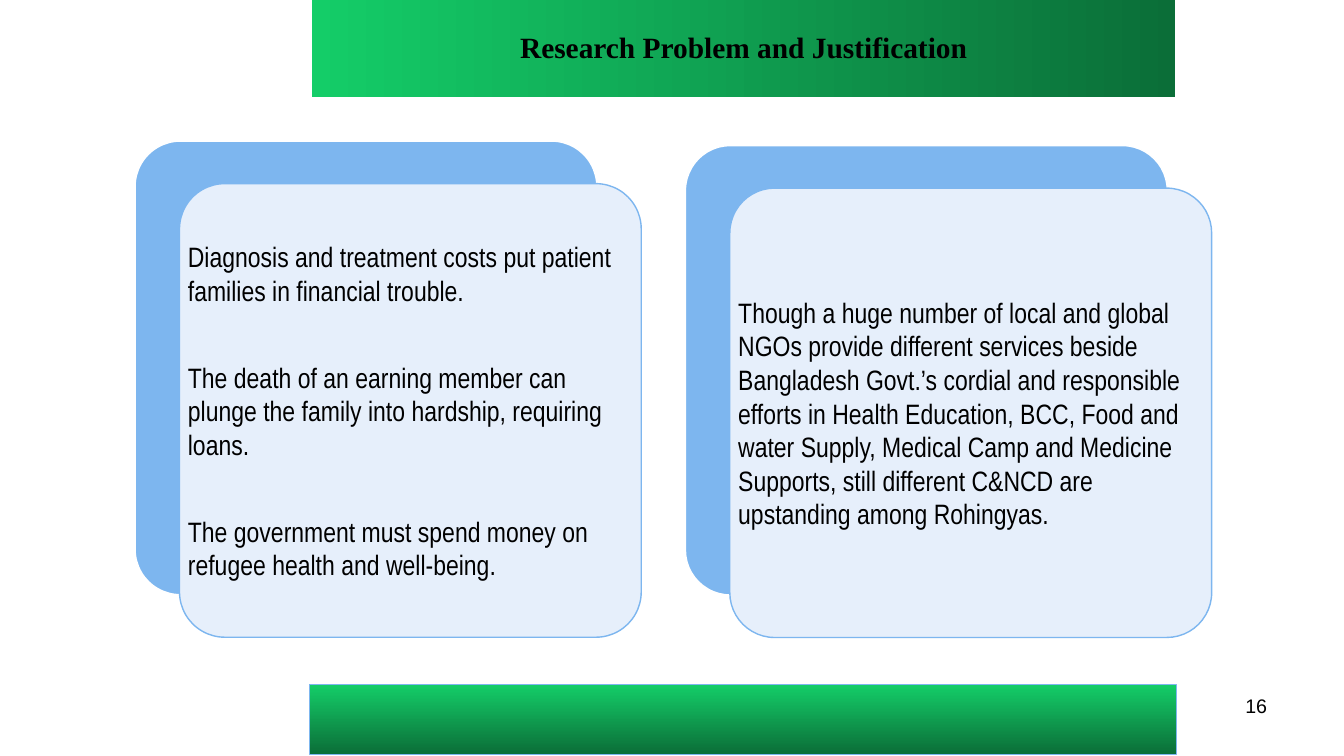
from pptx import Presentation
from pptx.dml.color import RGBColor
from pptx.enum.shapes import MSO_SHAPE as Shape
from pptx.enum.text import MSO_ANCHOR as Anchor, MSO_AUTO_SIZE as AutoSize, PP_ALIGN as Align
from pptx.util import Pt

# Content
TITLE = "Research Problem and Justification"
PAGE_NUMBER = "16"
CARDS = [  # left, top, width, height, paragraphs
    (96.5, 100.8, 329.8, 324, [
        "Diagnosis and treatment costs put patient families in financial trouble.",
        "The death of an earning member can plunge the family into hardship, requiring loans.",
        "The government must spend money on refugee health and well-being.",
    ]),
    (489.6, 104, 344.2, 321, [
        "Though a huge number of local and global NGOs provide different services beside "
        "Bangladesh Govt.’s cordial and responsible efforts in Health Education, BCC, "
        "Food and water Supply, Medical Camp and Medicine Supports, still different "
        "C&NCD are upstanding among Rohingyas.",
    ]),
]
COLORS = {"black": "000000", "white": "FFFFFF", "blue": "7DB6EF", "pale": "E6EFFB",
          "green": "14CD68", "dark_green": "0B6E38"}
CARD_SHIFT = (31.7, 30.4)
CARD_INSET = 6
PARAGRAPH_GAP = 38


def color(name):
    return RGBColor.from_string(COLORS[name])


def box(left, top, width, height):
    return Pt(left), Pt(top), Pt(width), Pt(height)


def set_font(paragraph, name, size, bold=False):
    font = paragraph.font
    font.name, font.size, font.bold = name, Pt(size), bold
    font.color.rgb = color("black")


def set_insets(frame, horizontal, vertical):
    frame.margin_left = frame.margin_right = Pt(horizontal)
    frame.margin_top = frame.margin_bottom = Pt(vertical)


def green_gradient(shape, angle):
    shape.fill.gradient()
    shape.fill.gradient_angle = angle
    for stop, name in zip(shape.fill.gradient_stops, ("green", "dark_green")):
        stop.color.rgb = color(name)


def add_panel(place, fill, line):
    panel = slide.shapes.add_shape(Shape.ROUNDED_RECTANGLE, *place)
    panel.adjustments[0] = 0.1
    panel.shadow.inherit = False
    panel.fill.solid()
    panel.fill.fore_color.rgb = color(fill)
    panel.line.color.rgb = color(line)
    panel.line.width = Pt(1)


prs = Presentation()
prs.slide_width, prs.slide_height = Pt(960), Pt(540)
slide = prs.slides.add_slide(prs.slide_layouts[5])

# Title band
title = slide.shapes.title
title.left, title.top, title.width, title.height = box(222.7, 0, 617, 69.3)
green_gradient(title, 0)
heading = title.text_frame
heading.text = TITLE
heading.auto_size = AutoSize.NONE
heading.vertical_anchor = Anchor.MIDDLE
set_insets(heading, 5, 3)
heading.paragraphs[0].alignment = Align.CENTER
heading.paragraphs[0].line_spacing = 0.9
set_font(heading.paragraphs[0], "Times New Roman", 21, bold=True)

# Cards: a back panel, a shifted front panel and its text
for left, top, width, height, statements in CARDS:
    front = box(left + CARD_SHIFT[0], top + CARD_SHIFT[1], width, height)
    add_panel(box(left, top, width, height), "blue", "white")
    add_panel(front, "pale", "blue")
    body = slide.shapes.add_textbox(*front).text_frame
    body.word_wrap = True
    body.vertical_anchor = Anchor.MIDDLE
    set_insets(body, CARD_INSET, CARD_INSET)
    for index, statement in enumerate(statements):
        paragraph = body.add_paragraph() if index else body.paragraphs[0]
        paragraph.text = statement
        paragraph.space_before = Pt(PARAGRAPH_GAP if index else 0)
        set_font(paragraph, "Arial Narrow", 20)

# Bottom band
footer = slide.shapes.add_shape(Shape.RECTANGLE, *box(221, 489, 619.2, 49.7))
footer.shadow.inherit = False
green_gradient(footer, 270)
footer.line.color.rgb = color("blue")
footer.line.width = Pt(0.75)

# Page number
page = slide.shapes.add_textbox(*box(688.3, 491.8, 223.9, 37.4)).text_frame
page.word_wrap = True
page.text = PAGE_NUMBER
page.paragraphs[0].alignment = Align.RIGHT
set_font(page.paragraphs[0], "Arial", 14)

prs.save("out.pptx")
